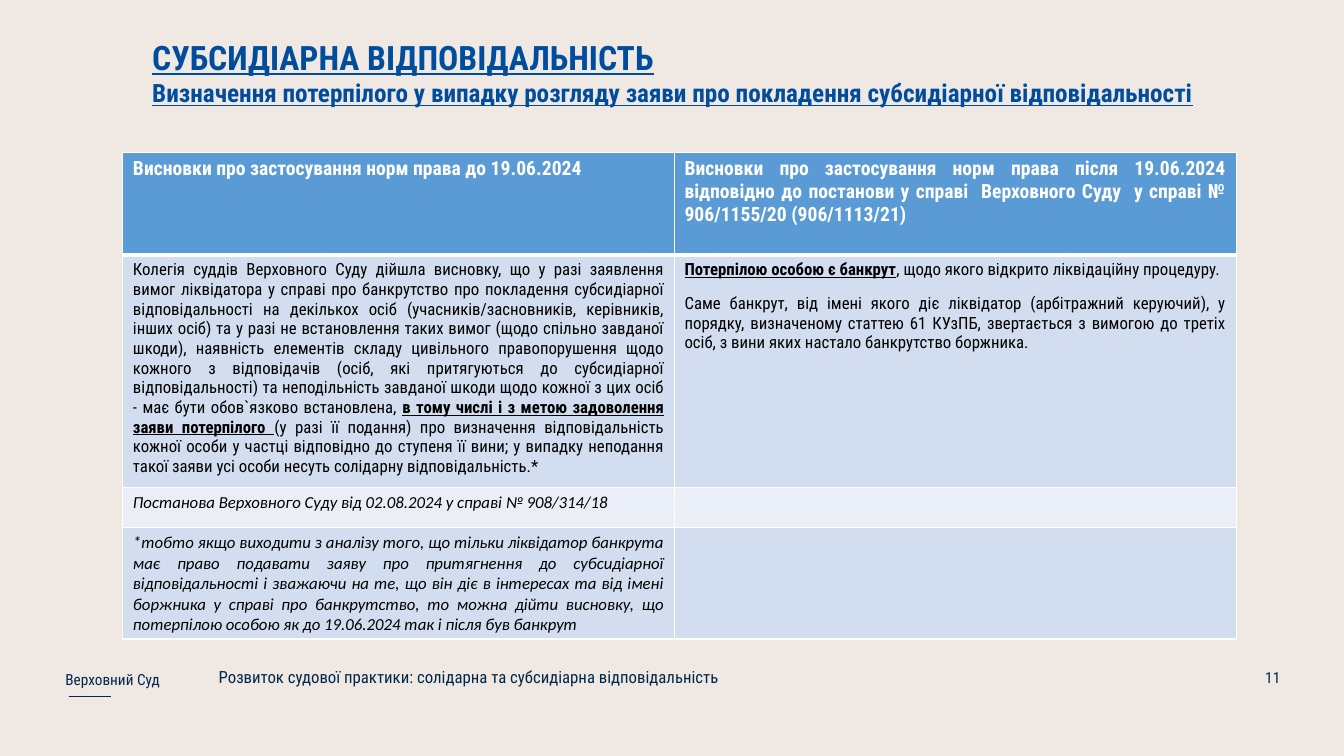
from lxml.etree import SubElement
from pptx import Presentation
from pptx.dml.color import RGBColor
from pptx.enum.shapes import MSO_CONNECTOR
from pptx.enum.text import MSO_ANCHOR, MSO_AUTO_SIZE, PP_ALIGN
from pptx.oxml.ns import qn
from pptx.util import Pt

HUES = {
    "back": "F0E8E3", "title": "004D9D", "navy": "00274E", "foot": "002949",
    "head": "5B9BD5", "band": "D2DEEF", "pale": "EAEFF7",
    "white": "FFFFFF", "black": "000000",
}
ROBOTO = "Roboto Condensed"
JUST = PP_ALIGN.JUSTIFY
LEFT = PP_ALIGN.LEFT
BOLD = {"bold": True}
MARK = {"bold": True, "line": True}
SLANT = {"face": "Calibri", "slant": True}

HEAD = [
    (LEFT, [("Висновки про застосування норм права до 19.06.2024", BOLD)]),
    (JUST, [("Висновки про застосування норм права після 19.06.2024 відповідно до постанови у справі  Верховного Суду  у справі № 906/1155/20 (906/1113/21)", BOLD)]),
]
BEFORE = [
    ("Колегія суддів Верховного Суду дійшла висновку, що у разі заявлення вимог ліквідатора у справі про банкрутство про покладення субсидіарної відповідальності на декількох осіб (учасників/засновників, керівників, інших осіб) та у разі не встановлення таких вимог (щодо спільно завданої шкоди), наявність елементів складу цивільного правопорушення щодо кожного з відповідачів (осіб, які притягуються до субсидіарної відповідальності) та неподільність завданої шкоди щодо кожної з цих осіб - має бути обов`язково встановлена, ", {}),
    ("в тому числі і з метою задоволення заяви потерпілого ", MARK),
    ("(у разі її подання) про визначення відповідальність кожної особи у частці відповідно до ступеня її вини; у випадку неподання такої заяви усі особи несуть солідарну відповідальність.*", {}),
]
AFTER = [
    (JUST, [("Потерпілою особою є банкрут", MARK),
            (", щодо якого відкрито ліквідаційну процедуру. ", {})]),
    (JUST, [("Саме банкрут, від імені якого діє ліквідатор (арбітражний керуючий), у порядку, визначеному статтею 61 КУзПБ, звертається з вимогою до третіх осіб, з вини яких настало банкрутство боржника. ", {})]),
]
CASE = [("Постанова Верховного Суду від 02.08.2024 у справі № 908/314/18", SLANT)]
NOTE = [("*тобто якщо виходити з аналізу того, що тільки ліквідатор банкрута має право подавати заяву про притягнення до субсидіарної відповідальності і зважаючи на те, що він діє в інтересах та від імені боржника у справі про банкрутство, то можна дійти висновку, що потерпілою особою як до 19.06.2024 так і після був банкрут", SLANT)]

ROWS = [
    (73.5, "head", "white", 14, [[HEAD[0]], [HEAD[1]]]),
    (166, "band", "black", 12, [[(JUST, BEFORE)], AFTER]),
    (28.5, "pale", "black", 12, [[(LEFT, CASE)], []]),
    (79.5, "band", "black", 12, [[(JUST, NOTE)], []]),
]


def tint(name):
    return RGBColor.from_string(HUES[name])


def add_run(para, text, size, hue, face=ROBOTO, bold=False, line=False, slant=False):
    run = para.add_run()
    run.text = text
    font = run.font
    font.size, font.name = Pt(size), face
    font.bold, font.underline, font.italic = bold, line, slant
    font.color.rgb = tint(hue)


def add_paras(frame, paras, size, hue):
    for step, (align, runs) in enumerate(paras):
        para = frame.add_paragraph() if step else frame.paragraphs[0]
        para.alignment = align
        if len(paras) > 1:
            para.space_after = Pt(10)
        for text, style in runs:
            add_run(para, text, size, hue, **style)


def add_edge(cell, side, width):
    props = cell._tc.get_or_add_tcPr()
    edge = SubElement(props, qn("a:" + side), w=str(Pt(width)))
    fill = SubElement(edge, qn("a:solidFill"))
    SubElement(fill, qn("a:srgbClr"), val=HUES["white"])


def add_title(slide, left, top, width, height):
    title = slide.shapes.title
    title.left, title.top = Pt(left), Pt(top)
    title.width, title.height = Pt(width), Pt(height)
    frame = title.text_frame
    frame.word_wrap = True
    frame.auto_size = MSO_AUTO_SIZE.SHAPE_TO_FIT_TEXT
    frame.vertical_anchor = MSO_ANCHOR.TOP
    lines = [
        ("СУБСИДІАРНА ВІДПОВІДАЛЬНІСТЬ", 24),
        ("Визначення потерпілого у випадку розгляду заяви про покладення субсидіарної відповідальності", 18),
    ]
    for step, (text, size) in enumerate(lines):
        para = frame.add_paragraph() if step else frame.paragraphs[0]
        para.alignment = LEFT
        para.line_spacing = 1.0
        para.space_before = Pt(0)
        add_run(para, text, size, "title", **MARK)


def add_grid(slide, left, top, width, height):
    grid = slide.shapes.add_table(
        len(ROWS), 2, Pt(left), Pt(top), Pt(width), Pt(height)).table
    first = 394
    grid.columns[0].width = Pt(first)
    grid.columns[1].width = Pt(width - first)
    for row, (tall, fill, hue, size, cells) in enumerate(ROWS):
        grid.rows[row].height = Pt(tall)
        for col, paras in enumerate(cells):
            cell = grid.cell(row, col)
            add_paras(cell.text_frame, paras, size, hue)
            for side in ("lnL", "lnR", "lnT", "lnB"):
                thick = (row, side) in ((0, "lnB"), (1, "lnT"))
                add_edge(cell, side, 3 if thick else 1)
            cell.fill.solid()
            cell.fill.fore_color.rgb = tint(fill)


def add_label(slide, box, text, size, hue, align, anchor, space):
    frame = slide.shapes.add_textbox(*map(Pt, box)).text_frame
    frame.word_wrap = True
    frame.vertical_anchor = anchor
    para = frame.paragraphs[0]
    para.alignment = align
    para.line_spacing = space
    add_run(para, text, size, hue)
    return para


def add_foot(slide, left, top, width, height):
    mid = MSO_ANCHOR.MIDDLE
    add_label(slide, (left, top + 0.7, 104, height), "Верховний Суд",
              10.9, "navy", LEFT, mid, 1.14)
    topic = add_label(slide, (left + 109.5, top + 5, 608.4, 26),
                      "Розвиток судової практики: солідарна та субсидіарна відповідальність",
                      12, "foot", JUST, MSO_ANCHOR.TOP, 0.9)
    topic.space_before = Pt(11)
    add_label(slide, (left + width - 216, top, 216, height), "11",
              10.9, "navy", PP_ALIGN.RIGHT, mid, 1.0)
    level = Pt(top + 28)
    rule = slide.shapes.add_connector(
        MSO_CONNECTOR.STRAIGHT, Pt(left + 9.4), level, Pt(left + 39.6), level)
    rule.line.color.rgb = tint("navy")
    rule.line.width = Pt(1.12)
    SubElement(rule._element.spPr, qn("a:effectLst"))


def main():
    deck = Presentation()
    deck.slide_width, deck.slide_height = Pt(960), Pt(540)
    slide = deck.slides.add_slide(deck.slide_layouts[5])
    back = slide.background.fill
    back.solid()
    back.fore_color.rgb = tint("back")
    add_title(slide, 101.5, 23, 838.8, 58.3)
    add_grid(slide, 87.8, 108.7, 795.2, 347.5)
    add_foot(slide, 39.6, 469.5, 882, 28.8)
    deck.save("out.pptx")


if __name__ == "__main__":
    main()
